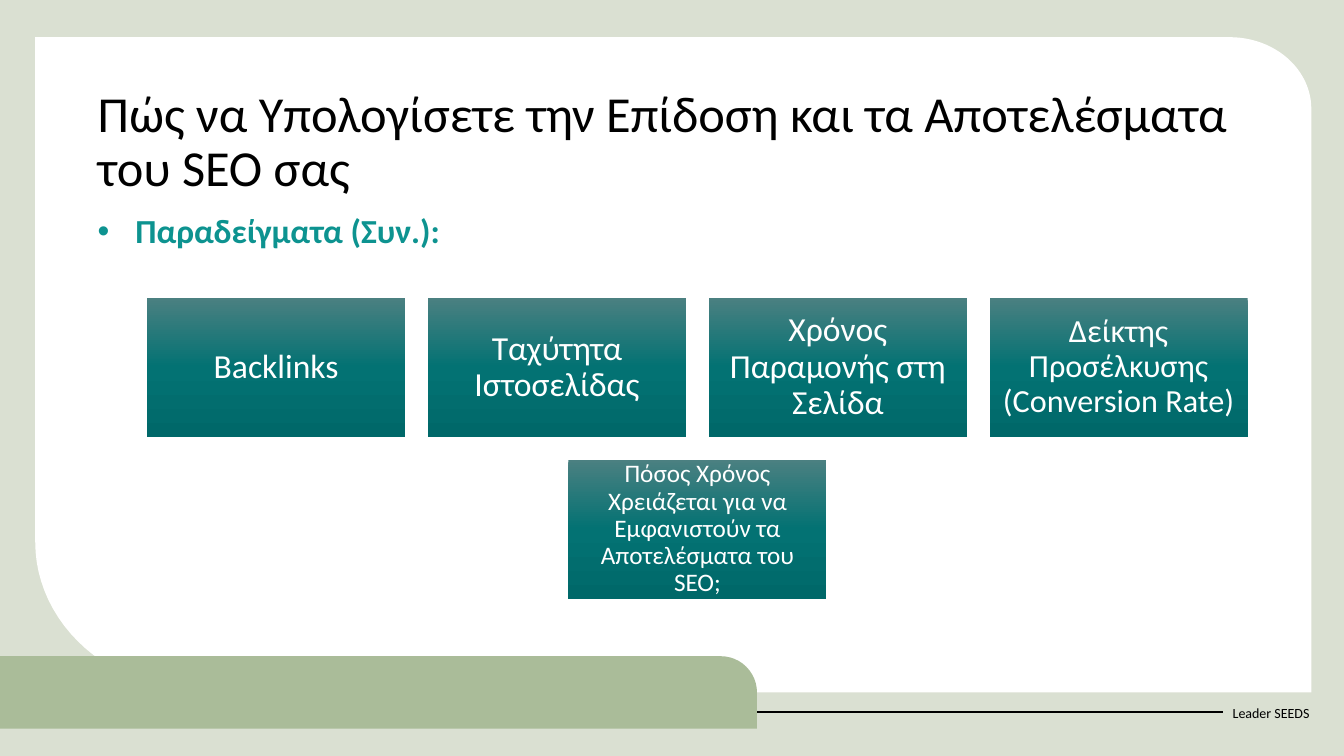
from copy import deepcopy
from dataclasses import dataclass
from math import cos, pi, sin

from lxml.etree import SubElement
from pptx import Presentation
from pptx.dml.color import RGBColor
from pptx.enum.shapes import MSO_CONNECTOR, MSO_SHAPE
from pptx.enum.text import MSO_ANCHOR, MSO_AUTO_SIZE, PP_ALIGN
from pptx.oxml.ns import qn
from pptx.util import Pt


@dataclass(frozen=True)
class Theme:
    font: str = "Calibri"
    backdrop: str = "DAE0D2"
    panel: str = "FFFFFF"
    band: str = "AABC99"
    ink: str = "000000"
    accent: str = "0D9390"
    box_text: str = "FFFFFF"
    box_stops: tuple = ((0, "4B8081"), (0.5, "037273"), (1, "006869"))
    title_size: int = 36
    bullet_size: int = 24
    footer_size: int = 10
    rule_width: float = 1.5


THEME = Theme()

BOX_W, BOX_H = 184.3, 99.4
BOX_GAP = 16.3
GRID_CENTER, GRID_TOP = 498.2, 212.6
BOX_ROWS = [
    [
        ("Backlinks", 24, 7.2),
        ("Ταχύτητα Ιστοσελίδας", 24, 7.2),
        ("Χρόνος Παραμονής στη Σελίδα", 24, 7.2),
        ("Δείκτης Προσέλκυσης (Conversion Rate)", 23, 7.2),
    ],
    [("Πόσος Χρόνος Χρειάζεται για να Εμφανιστούν τα Αποτελέσματα του SEO;", 18, 5)],
]


def rgb(value):
    return RGBColor.from_string(value)


def paint(sp, color):
    sp.shadow.inherit = False
    sp.fill.solid()
    sp.fill.fore_color.rgb = rgb(color)
    sp.line.fill.background()


def paint_gradient(sp, stops):
    sp.shadow.inherit = False
    sp.line.fill.background()
    sp.fill.gradient()
    sp.fill.gradient_angle = 270
    stop_list = sp._element.spPr.find(".//" + qn("a:gsLst"))
    stop_list.append(deepcopy(stop_list[-1]))
    for stop, (position, color) in zip(sp.fill.gradient_stops, stops):
        stop.position = position
        stop.color.rgb = rgb(color)


def write(tf, text, size, color, bold=False, spacing=None):
    tf.word_wrap = True
    tf.auto_size = MSO_AUTO_SIZE.NONE
    p = tf.paragraphs[0]
    if spacing:
        p.line_spacing = spacing
    r = p.add_run()
    r.text = text
    r.font.name = THEME.font
    r.font.size = Pt(size)
    r.font.bold = bold
    r.font.color.rgb = rgb(color)
    return p


def corner(cx, cy, rx, ry, start, steps=24):
    angles = [start + pi / 2 * i / steps for i in range(steps + 1)]
    return [(Pt(cx + rx * cos(a)), Pt(cy + ry * sin(a))) for a in angles]


def add_panel(s):
    left, top, right, bottom = 25.2, 26.6, 936.7, 494.6
    small_rx, small_ry = 58.3, 51.1
    large_rx, large_ry = 122.4, 107.3
    points = [(Pt(left), Pt(top))]
    points += corner(right - small_rx, top + small_ry, small_rx, small_ry, -pi / 2)
    points += [(Pt(right), Pt(bottom))]
    points += corner(left + large_rx, bottom - large_ry, large_rx, large_ry, pi / 2)
    builder = s.shapes.build_freeform(*points[0])
    builder.add_line_segments(points[1:], close=True)
    paint(builder.convert_to_shape(), THEME.panel)


def add_rule(s, x1, x2, y):
    line = s.shapes.add_connector(MSO_CONNECTOR.STRAIGHT, Pt(x1), Pt(y), Pt(x2), Pt(y))
    line.line.color.rgb = rgb(THEME.ink)
    line.line.width = Pt(THEME.rule_width)
    SubElement(line._element.spPr, qn("a:effectLst"))


def add_band(s):
    sp = s.shapes.add_shape(MSO_SHAPE.ROUND_1_RECTANGLE,
                            Pt(0), Pt(468.7), Pt(540.7), Pt(51.8))
    sp.adjustments[0] = 0.5
    paint(sp, THEME.band)


def add_footer(s, text):
    tf = s.shapes.add_textbox(Pt(873.4), Pt(494.6), Pt(72.7), Pt(28.8)).text_frame
    tf.vertical_anchor = MSO_ANCHOR.MIDDLE
    write(tf, text, THEME.footer_size, THEME.ink)


def set_title(s, text):
    title = s.shapes.title
    title.left, title.top, title.width, title.height = Pt(62.6), Pt(59.8), Pt(834.5), Pt(63.4)
    s.shapes._spTree.append(title._element)
    tf = title.text_frame
    tf.vertical_anchor = MSO_ANCHOR.TOP
    p = write(tf, text, THEME.title_size, THEME.ink, spacing=0.9)
    p.alignment = PP_ALIGN.LEFT


def add_bullet(s, text):
    tf = s.shapes.add_textbox(Pt(62.6), Pt(149.8), Pt(834.5), Pt(40)).text_frame
    p = write(tf, text, THEME.bullet_size, THEME.accent, bold=True, spacing=0.9)
    pPr = p._p.get_or_add_pPr()
    pPr.set("marL", str(Pt(27)))
    pPr.set("indent", str(-Pt(27)))
    SubElement(pPr, qn("a:buFont")).set("typeface", "Arial")
    SubElement(pPr, qn("a:buChar")).set("char", "•")


def add_box(s, x, y, text, size, inset):
    sp = s.shapes.add_shape(MSO_SHAPE.RECTANGLE, Pt(x), Pt(y), Pt(BOX_W), Pt(BOX_H))
    paint_gradient(sp, THEME.box_stops)
    tf = sp.text_frame
    tf.margin_left = tf.margin_right = tf.margin_top = tf.margin_bottom = Pt(inset)
    tf.vertical_anchor = MSO_ANCHOR.MIDDLE
    p = write(tf, text, size, THEME.box_text, spacing=0.9)
    p.alignment = PP_ALIGN.CENTER


def add_box_grid(s, rows):
    for row, boxes in enumerate(rows):
        row_width = len(boxes) * (BOX_W + BOX_GAP) - BOX_GAP
        left = GRID_CENTER - row_width / 2
        y = GRID_TOP + row * (BOX_H + BOX_GAP)
        for col, (text, size, inset) in enumerate(boxes):
            add_box(s, left + col * (BOX_W + BOX_GAP), y, text, size, inset)


def main():
    prs = Presentation()
    prs.slide_width, prs.slide_height = Pt(960), Pt(540)
    s = prs.slides.add_slide(prs.slide_layouts[5])
    s.background.fill.solid()
    s.background.fill.fore_color.rgb = rgb(THEME.backdrop)
    add_panel(s)
    add_footer(s, "Leader SEEDS")
    add_rule(s, 0, 873.4, 508.8)
    add_band(s)
    set_title(s, "Πώς να Υπολογίσετε την Επίδοση και τα Αποτελέσματα του SEO σας")
    add_bullet(s, "Παραδείγματα (Συν.):")
    add_box_grid(s, BOX_ROWS)
    prs.save("out.pptx")


if __name__ == "__main__":
    main()
